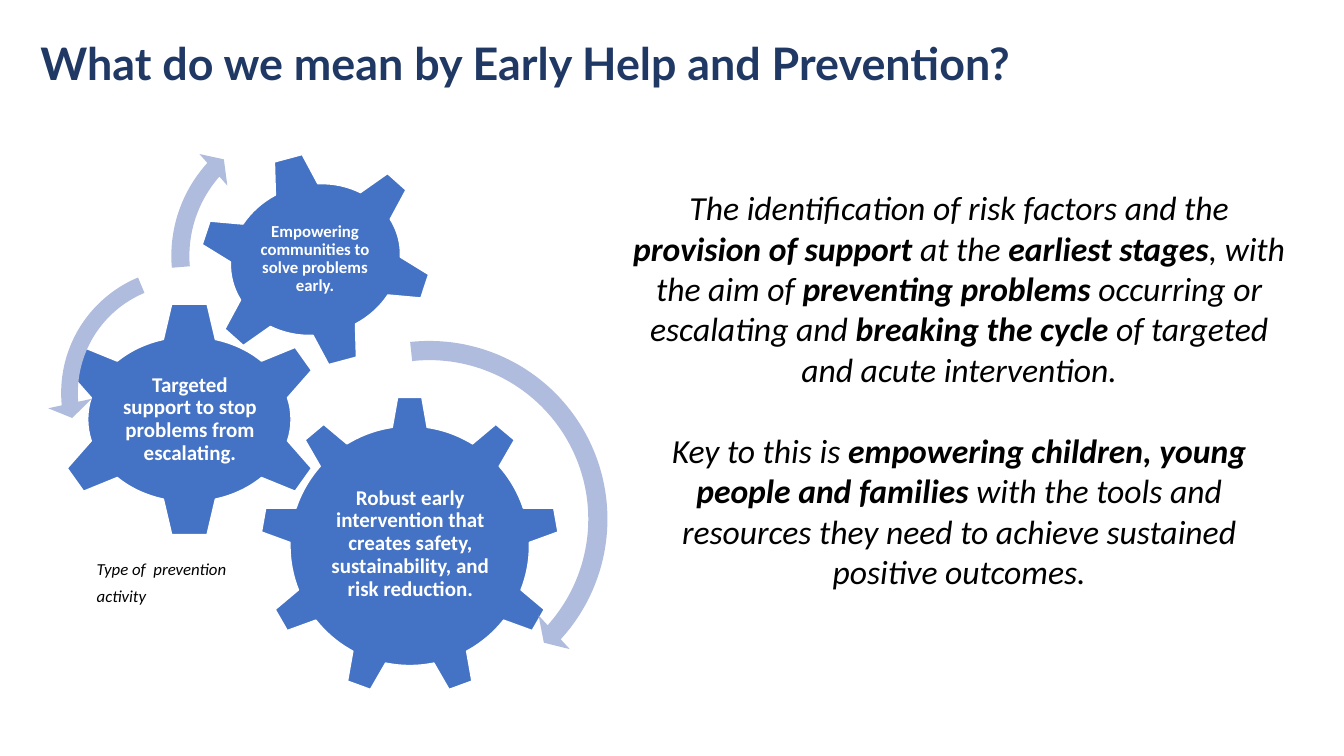
import pptx
import pptx.util
import pptx.dml.color
import pptx.enum.shapes
import pptx.enum.text

Pt = pptx.util.Pt
KIND = pptx.enum.shapes.MSO_SHAPE
ALIGN = pptx.enum.text.PP_ALIGN
ANCHOR = pptx.enum.text.MSO_ANCHOR
HUE = {"navy": "203864", "gear": "4472C4", "arrow": "B0BCDE", "white": "FFFFFF", "black": "000000"}


def color(name):
    return pptx.dml.color.RGBColor.from_string(HUE[name])


def write(box, paras, hue, font, para, frame):
    text = box.text_frame
    base = {"word_wrap": True, "auto_size": pptx.enum.text.MSO_AUTO_SIZE.NONE,
            "vertical_anchor": ANCHOR.TOP}
    for key, value in (base | frame).items():
        setattr(text, key, value)
    for row, words in enumerate(paras):
        line = text.add_paragraph() if row else text.paragraphs[0]
        for key, value in para.items():
            setattr(line, key, value)
        line.space_before = Pt(29.3 if row else 0)
        for part, piece in enumerate(words.split("*")):
            run = line.add_run()
            run.text = piece
            for key, value in ({"bold": part % 2 == 1} | font).items():
                setattr(run.font, key, value)
            run.font.color.rgb = color(hue)


deck = pptx.Presentation()
deck.slide_width, deck.slide_height = Pt(960), Pt(540)
slide = deck.slides.add_slide(deck.slide_layouts[5])

title = slide.shapes.title
place = {"left": 21.6, "top": 25.9, "width": 720.7, "height": 104.4}
for key, value in place.items():
    setattr(title, key, Pt(value))
write(title, ["What do we mean by Early Help and Prevention?"], "navy",
      {"name": "Lato", "size": Pt(32), "bold": True},
      {"alignment": ALIGN.LEFT, "line_spacing": 0.9}, {})

group = slide.shapes.add_group_shape().shapes
tight = {"margin_" + side: Pt(1.4) for side in ("left", "top", "right", "bottom")}
gears = [
    (KIND.GEAR_9, (185.8, 283, 213.8, 213.8), 0, (229, 333.4, 128.2, 110.2), 15,
     "Robust early intervention that creates safety, sustainability, and risk reduction."),
    (KIND.GEAR_6, (37.4, 215.3, 195.8, 168.5), 0, (84.2, 257.8, 103, 83.5), 15,
     "Targeted support to stop problems from escalating."),
    (KIND.GEAR_6, (141.1, 108.7, 168.5, 153.4), 345, (178.6, 141.1, 92.9, 87.8), 12,
     "Empowering communities to solve problems early."),
]
for kind, area, turn, inner, size, words in gears:
    gear = group.add_shape(kind, *map(Pt, area))
    gear.rotation = turn
    gear.shadow.inherit = False
    gear.fill.solid()
    gear.fill.fore_color.rgb = color("gear")
    gear.line.color.rgb = color("white")
    gear.line.width = Pt(1)
    label = group.add_textbox(*map(Pt, inner))
    write(label, [words], "white", {"name": "Calibri", "size": Pt(size), "bold": True},
          {"alignment": ALIGN.CENTER, "line_spacing": 0.9},
          tight | {"vertical_anchor": ANCHOR.MIDDLE})

arrows = [
    (KIND.CIRCULAR_ARROW, (169.9, 234, 273.6), (0.05, 2.99, 25.32, 158.29, 0.06)),
    (KIND.LEFT_CIRCULAR_ARROW, (33.8, 181.4, 198.7), (0.06, 4.3, 104.89, 148.38, 0.08)),
    (KIND.CIRCULAR_ARROW, (113.8, 75.6, 214.6), (0.06, 3.94, 133.14, 105.08, 0.07)),
]
for kind, (left, top, side), bends in arrows:
    arrow = group.add_shape(kind, Pt(left), Pt(top), Pt(side), Pt(side))
    for spot, bend in enumerate(bends):
        arrow.adjustments[spot] = bend
    arrow.shadow.inherit = False
    arrow.fill.solid()
    arrow.fill.fore_color.rgb = color("arrow")
    arrow.line.fill.background()

note = slide.shapes.add_textbox(Pt(69.1), Pt(394.6), Pt(98.6), Pt(25.2))
write(note, ["Type of  prevention activity"], "black",
      {"name": "Calibri", "size": Pt(12), "italic": True},
      {"line_spacing": Pt(19.1)}, dict.fromkeys(tight, 0))

body = slide.shapes.add_textbox(Pt(442.8), Pt(130.3), Pt(484.6), Pt(298.1))
write(body, [
    "The identification of risk factors and the *provision of support* at the "
    "*earliest stages*, with the aim of *preventing problems* occurring or escalating "
    "and *breaking the cycle* of targeted and acute intervention.",
    "Key to this is *empowering children, young people and families* with the tools "
    "and resources they need to achieve sustained positive outcomes.",
], "black", {"name": "Calibri", "size": Pt(24), "italic": True},
      {"alignment": ALIGN.CENTER}, {})

deck.save("out.pptx")
